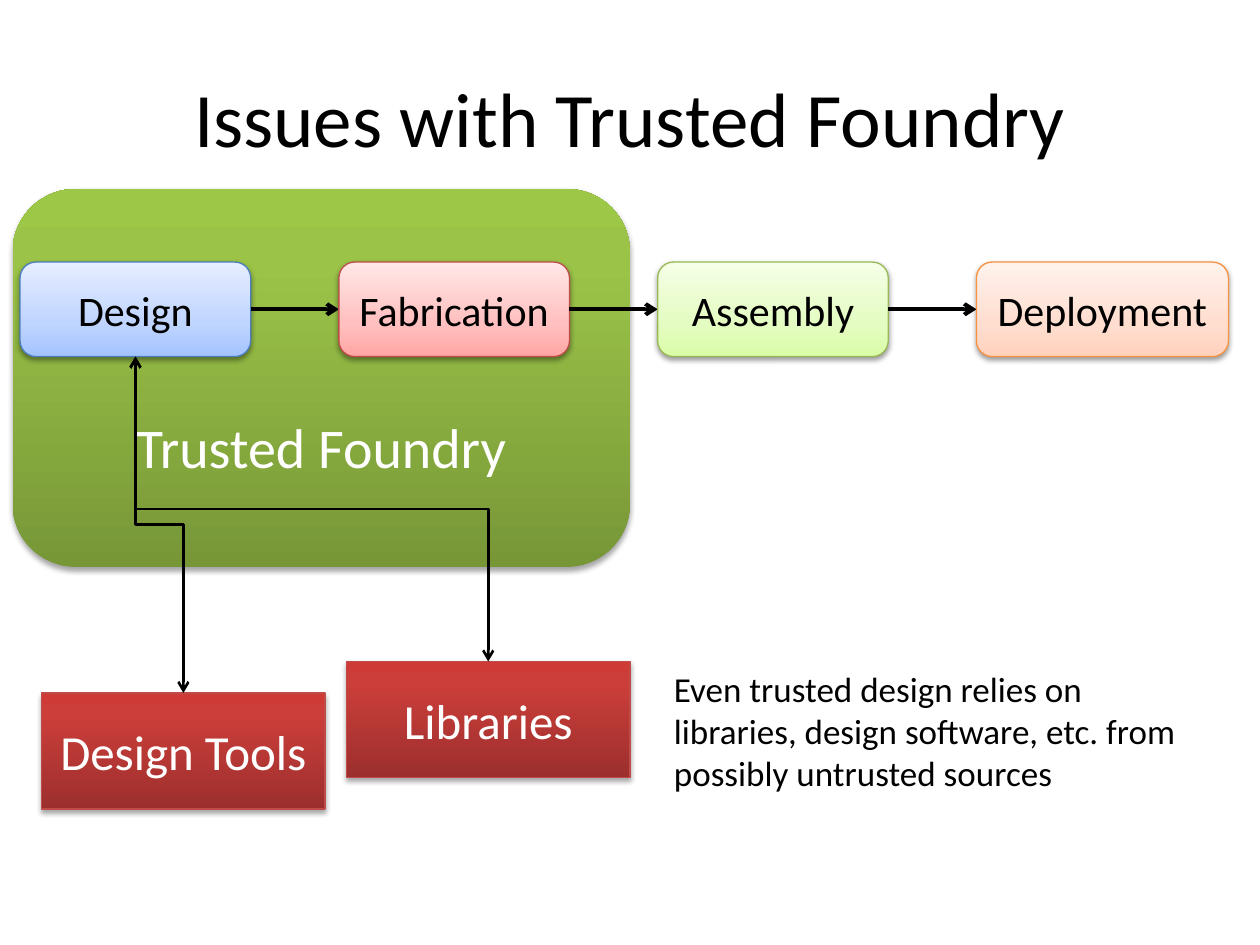
from lxml.etree import SubElement
from pptx import Presentation
from pptx.dml.color import RGBColor
from pptx.enum.shapes import MSO_CONNECTOR as CONNECTOR, MSO_SHAPE as SHAPE
from pptx.enum.text import MSO_ANCHOR as ANCHOR, PP_ALIGN as ALIGN
from pptx.oxml.ns import qn
from pptx.util import Inches, Pt

BLACK, WHITE = "000000", "FFFFFF"
RED_LINE = "BF4C48"
GREEN = [(0, "779737"), (80, "9BC348"), (100, "9DC746")]
RED = [(0, "9C2F2D"), (80, "CB3E3A"), (100, "CE3B37")]
STAGES = [
    ("Design", 1.83, ("A4C4FF", "BFD4FF", "E6EEFF"), "4B7EBC"),
    ("Fabrication", 1.83, ("FFA6A5", "FFC0BF", "FFE7E7"), RED_LINE),
    ("Assembly", 1.83, ("DAFDA7", "E4FCC2", "F5FFE7"), "98B955"),
    ("Deployment", 2, ("FFD2BD", "FFDED0", "FFF2ED"), "F69240"),
]
STAGE_LEFT, STAGE_TOP, STAGE_PITCH, STAGE_HEIGHT = 0.16, 2.08, 2.53, 0.75
SOURCES = [("Libraries", 2.75, 5.25), ("Design Tools", 0.33, 5.5)]
SOURCE_WIDTH, SOURCE_HEIGHT = 2.25, 0.92


def color(value):
    return RGBColor.from_string(value)


class SlideBuilder:
    font = "Calibri"

    def __init__(self, slide):
        self.slide = slide

    def fill_text(self, shape, text, size, text_color, align, anchor):
        frame = shape.text_frame
        frame.word_wrap = True
        frame.vertical_anchor = anchor
        frame.text = text
        paragraph = frame.paragraphs[0]
        paragraph.alignment = align
        font = paragraph.runs[0].font
        font.name, font.size = self.font, Pt(size)
        font.color.rgb = color(text_color)

    def text(self, box, text, size, align=ALIGN.LEFT, anchor=ANCHOR.TOP):
        shape = self.slide.shapes.add_textbox(*map(Inches, box))
        self.fill_text(shape, text, size, BLACK, align, anchor)

    def box(self, kind, box, text, size, text_color, stops, line=None, shadow=(35, 1.8)):
        shape = self.slide.shapes.add_shape(kind, *map(Inches, box))
        self.gradient(shape, stops)
        if line:
            shape.line.color.rgb = color(line)
            shape.line.width = Pt(0.75)
        else:
            shape.line.fill.background()
        self.shadow(shape, *shadow)
        self.fill_text(shape, text, size, text_color, ALIGN.CENTER, ANCHOR.MIDDLE)
        return shape

    def gradient(self, shape, stops):
        shape.fill.gradient()
        shape.fill.gradient_angle = 90
        stop_list = shape.element.spPr.find(qn("a:gradFill")).find(qn("a:gsLst"))
        for stop in list(stop_list):
            stop_list.remove(stop)
        for position, value in stops:
            stop = SubElement(stop_list, qn("a:gs"), pos=str(position * 1000))
            SubElement(stop, qn("a:srgbClr"), val=value)

    def shadow(self, shape, opacity, distance):
        shape.shadow.inherit = False
        effects = shape.element.spPr.find(qn("a:effectLst"))
        outer = SubElement(effects, qn("a:outerShdw"), blurRad=str(Pt(3.1)),
                           dist=str(Pt(distance)), dir="5400000", rotWithShape="0")
        shade = SubElement(outer, qn("a:srgbClr"), val=BLACK)
        SubElement(shade, qn("a:alpha"), val=str(opacity * 1000))

    def connector(self, kind, start, end, width, ends):
        connector = self.slide.shapes.add_connector(kind, *map(Inches, start + end))
        connector.line.color.rgb = color(BLACK)
        connector.line.width = Pt(width)
        properties = connector.element.spPr
        for name in ends:
            SubElement(properties.find(qn("a:ln")), qn(name), type="arrow")
        SubElement(properties, qn("a:effectLst"))
        return connector

    def arrow(self, start, end):
        self.connector(CONNECTOR.STRAIGHT, start, end, 2.25, ["a:tailEnd"])

    def vertical_elbow(self, start, end):
        (x1, y1), (x2, y2) = start, end
        center_x, center_y = (x1 + x2) / 2, (y1 + y2) / 2
        half_width, half_height = (y2 - y1) / 2, (x2 - x1) / 2
        connector = self.connector(
            CONNECTOR.ELBOW,
            (center_x + half_width, center_y - half_height),
            (center_x - half_width, center_y + half_height),
            1.5, ["a:headEnd", "a:tailEnd"])
        connector.element.spPr.find(qn("a:xfrm")).set("rot", "16200000")


def main():
    presentation = Presentation()
    presentation.slide_width, presentation.slide_height = Inches(10), Inches(7.5)
    builder = SlideBuilder(presentation.slides.add_slide(presentation.slide_layouts[6]))

    builder.text((0.5, 0.3, 9, 1.25), "Issues with Trusted Foundry", 44,
                 ALIGN.CENTER, ANCHOR.MIDDLE)
    foundry = builder.box(SHAPE.ROUNDED_RECTANGLE, (0.1, 1.5, 4.9, 3),
                          "Trusted Foundry", 32, WHITE, GREEN)
    foundry.text_frame.margin_top = Inches(1.13)

    middle = STAGE_TOP + STAGE_HEIGHT / 2
    for index, (name, width, colors, line) in enumerate(STAGES):
        left = STAGE_LEFT + index * STAGE_PITCH
        builder.box(SHAPE.ROUNDED_RECTANGLE, (left, STAGE_TOP, width, STAGE_HEIGHT),
                    name, 24, BLACK, list(zip((0, 35, 100), colors)), line, (38, 1.6))
        if index < len(STAGES) - 1:
            builder.arrow((left + width, middle), (left + STAGE_PITCH, middle))

    design_bottom = (STAGE_LEFT + STAGES[0][1] / 2, STAGE_TOP + STAGE_HEIGHT)
    for name, left, top in SOURCES:
        builder.box(SHAPE.RECTANGLE, (left, top, SOURCE_WIDTH, SOURCE_HEIGHT),
                    name, 28, WHITE, RED, RED_LINE)
        builder.vertical_elbow(design_bottom, (left + SOURCE_WIDTH / 2, top))

    builder.text((5.25, 5.25, 4.42, 1.11),
                 "Even trusted design relies on libraries, design software, etc. "
                 "from possibly untrusted sources", 20)
    presentation.save("out.pptx")


if __name__ == "__main__":
    main()
